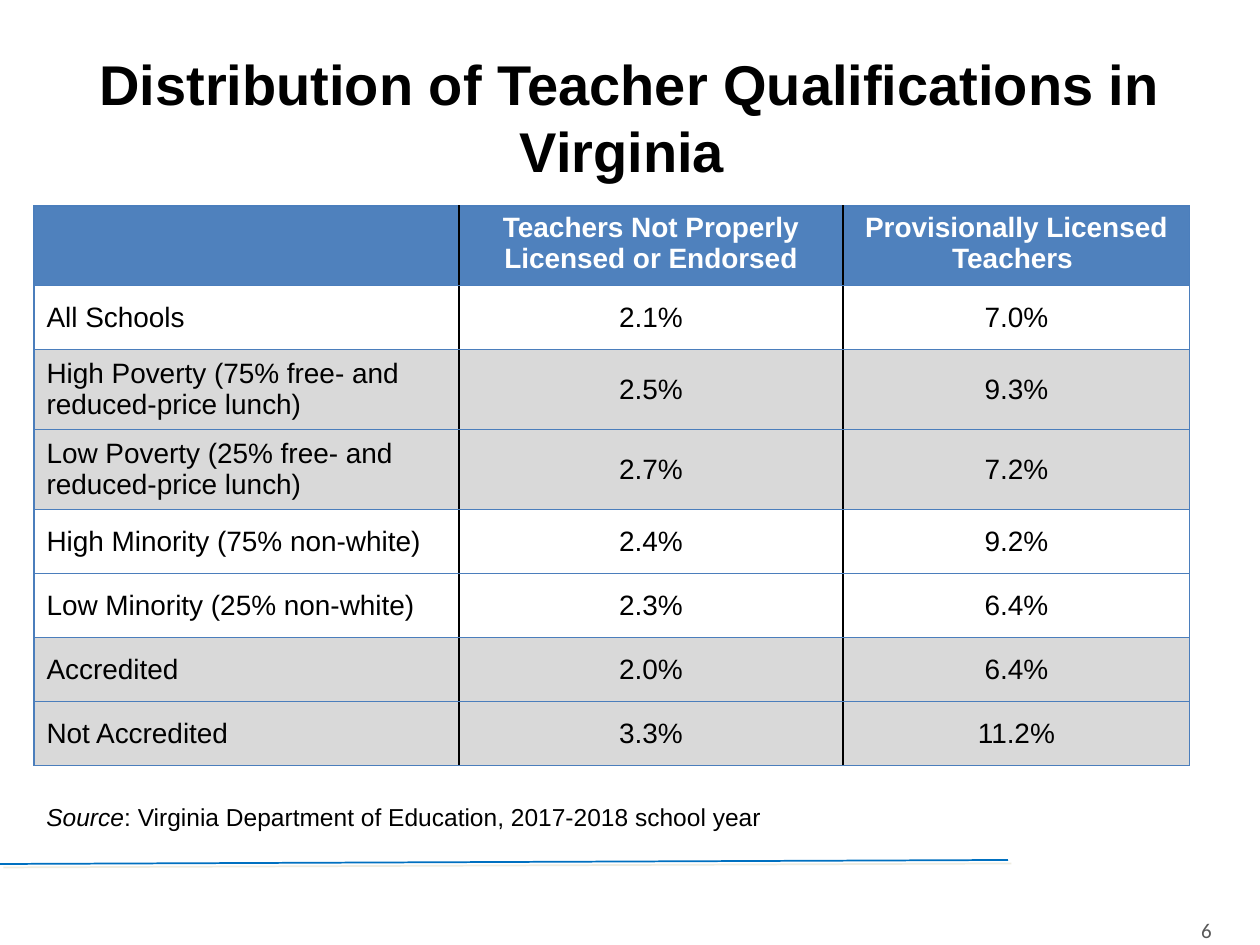
from lxml import etree
from pptx import Presentation
from pptx.dml.color import RGBColor
from pptx.enum.shapes import MSO_CONNECTOR
from pptx.enum.text import MSO_ANCHOR, MSO_AUTO_SIZE, PP_ALIGN
from pptx.oxml.ns import qn
from pptx.util import Emu, Pt

EMU_PER_PX = 914400 / 126
BLACK, WHITE, GRAY, DARK_GRAY = "000000", "FFFFFF", "D9D9D9", "595959"
HEADER_BLUE, GRID_BLUE, RULE_BLUE, SHADOW = "4F81BD", "4B7EBC", "0070C0", "EEECE1"

COLUMN_WIDTHS = [425, 384, 347]
ROW_HEIGHT = 64
SHADED_ROWS = {2, 3, 6, 7}
ROWS = [
    ["", "Teachers Not Properly Licensed or Endorsed", "Provisionally Licensed Teachers "],
    ["All Schools", "2.1%", "7.0%"],
    ["High Poverty (75% free- and reduced-price lunch)", "2.5%", "9.3%"],
    ["Low Poverty (25% free- and reduced-price lunch)", "2.7%", "7.2%"],
    ["High Minority (75% non-white)", "2.4%", "9.2%"],
    ["Low Minority (25% non-white)", "2.3%", "6.4%"],
    ["Accredited", "2.0%", "6.4%"],
    ["Not Accredited", "3.3%", "11.2%"],
]


def px(*lengths):
    """Turn pixel lengths into a list of EMU lengths."""
    return [Emu(round(length * EMU_PER_PX)) for length in lengths]


def color(value):
    """Return the colour of a hex string."""
    return RGBColor.from_string(value)


def set_attributes(target, values):
    """Set every attribute named in a dict of format values."""
    for name, value in values.items():
        setattr(target, name, value)


def write_runs(paragraph, runs, alignment, text_color, **font_values):
    """Write (text, own font values) runs into a paragraph."""
    paragraph.alignment = alignment
    for text, own_values in runs:
        run = paragraph.add_run()
        run.text = text
        set_attributes(run.font, {"name": "Arial", **font_values, **own_values})
        run.font.color.rgb = color(text_color)


def add_title(slide, text):
    """Place and fill the title placeholder."""
    title = slide.shapes.title
    left, top, width, height = px(63, 38, 1134, 157)
    set_attributes(title, {"left": left, "top": top, "width": width, "height": height})
    set_attributes(title.text_frame, {
        "word_wrap": True, "auto_size": MSO_AUTO_SIZE.NONE,
        "vertical_anchor": MSO_ANCHOR.MIDDLE,
    })
    write_runs(title.text_frame.paragraphs[0], [(text, {})], PP_ALIGN.CENTER, BLACK,
               size=Pt(32), bold=True)


def add_text(slide, box, runs, alignment, text_color, frame_values, **font_values):
    """Add a text box holding one paragraph."""
    frame = slide.shapes.add_textbox(*px(*box)).text_frame
    set_attributes(frame, frame_values)
    write_runs(frame.paragraphs[0], runs, alignment, text_color, **font_values)


def add_border(cell, side, border_color, width):
    """Draw one side of a cell border."""
    line = etree.SubElement(cell._tc.get_or_add_tcPr(), qn(f"a:ln{side}"), w=str(Pt(width)))
    fill = etree.SubElement(line, qn("a:solidFill"))
    etree.SubElement(fill, qn("a:srgbClr"), val=border_color)


def format_cell(cell, text, row, column):
    """Write a cell and give it borders, fill and alignment."""
    is_header = row == 0
    outer, inner = (GRID_BLUE, 0.75), (BLACK, 1)
    add_border(cell, "L", *(outer if column == 0 else inner))
    add_border(cell, "R", *(outer if column == len(COLUMN_WIDTHS) - 1 else inner))
    for side in "TB":
        add_border(cell, side, *outer)
    if is_header or row in SHADED_ROWS:
        cell.fill.solid()
        cell.fill.fore_color.rgb = color(HEADER_BLUE if is_header else GRAY)
    else:
        cell.fill.background()
    cell.vertical_anchor = MSO_ANCHOR.TOP if is_header else MSO_ANCHOR.MIDDLE
    paragraph = cell.text_frame.paragraphs[0]
    paragraph.font.size = Pt(16)
    if text:
        write_runs(paragraph, [(text, {})], PP_ALIGN.CENTER if column else PP_ALIGN.LEFT,
                   WHITE if is_header else BLACK, size=Pt(16), bold=is_header)


def add_qualifications_table(slide):
    """Add the table of teacher qualifications."""
    box = px(34, 206, sum(COLUMN_WIDTHS), ROW_HEIGHT * len(ROWS))
    table = slide.shapes.add_table(len(ROWS), len(COLUMN_WIDTHS), *box).table
    table.horz_banding = False
    for column, width in zip(table.columns, px(*COLUMN_WIDTHS)):
        column.width = width
    for row, texts in enumerate(ROWS):
        table.rows[row].height = px(ROW_HEIGHT)[0]
        for column, text in enumerate(texts):
            format_cell(table.cell(row, column), text, row, column)


def add_footer_rule(slide):
    """Add the slanted footer line with its pale shadow."""
    rule = slide.shapes.add_connector(MSO_CONNECTOR.STRAIGHT, *px(1008, 860, 0, 864))
    rule.line.color.rgb = color(RULE_BLUE)
    rule.line.width = Pt(1)
    effects = etree.SubElement(rule._element.spPr, qn("a:effectLst"))
    shadow = etree.SubElement(effects, qn("a:outerShdw"), dist=str(Pt(2.8)), dir="2700000")
    etree.SubElement(shadow, qn("a:srgbClr"), val=SHADOW)


def main():
    """Build the slide and save it."""
    presentation = Presentation()
    presentation.slide_width, presentation.slide_height = px(1260, 945)
    slide = presentation.slides.add_slide(presentation.slide_layouts[5])
    add_footer_rule(slide)
    add_title(slide, "Distribution of Teacher Qualifications in Virginia ")
    add_text(slide, (930, 905, 294, 50), [("6", {})], PP_ALIGN.RIGHT, DARK_GRAY,
             {"word_wrap": True, "vertical_anchor": MSO_ANCHOR.MIDDLE},
             name="Calibri", size=Pt(12))
    add_qualifications_table(slide)
    source = [("Source", {"italic": True}),
              (": Virginia Department of Education, 2017-2018 school year", {})]
    add_text(slide, (34, 796, 757, 43), source, PP_ALIGN.LEFT, BLACK,
             {"word_wrap": False, "auto_size": MSO_AUTO_SIZE.SHAPE_TO_FIT_TEXT}, size=Pt(14))
    presentation.save("out.pptx")


if __name__ == "__main__":
    main()
